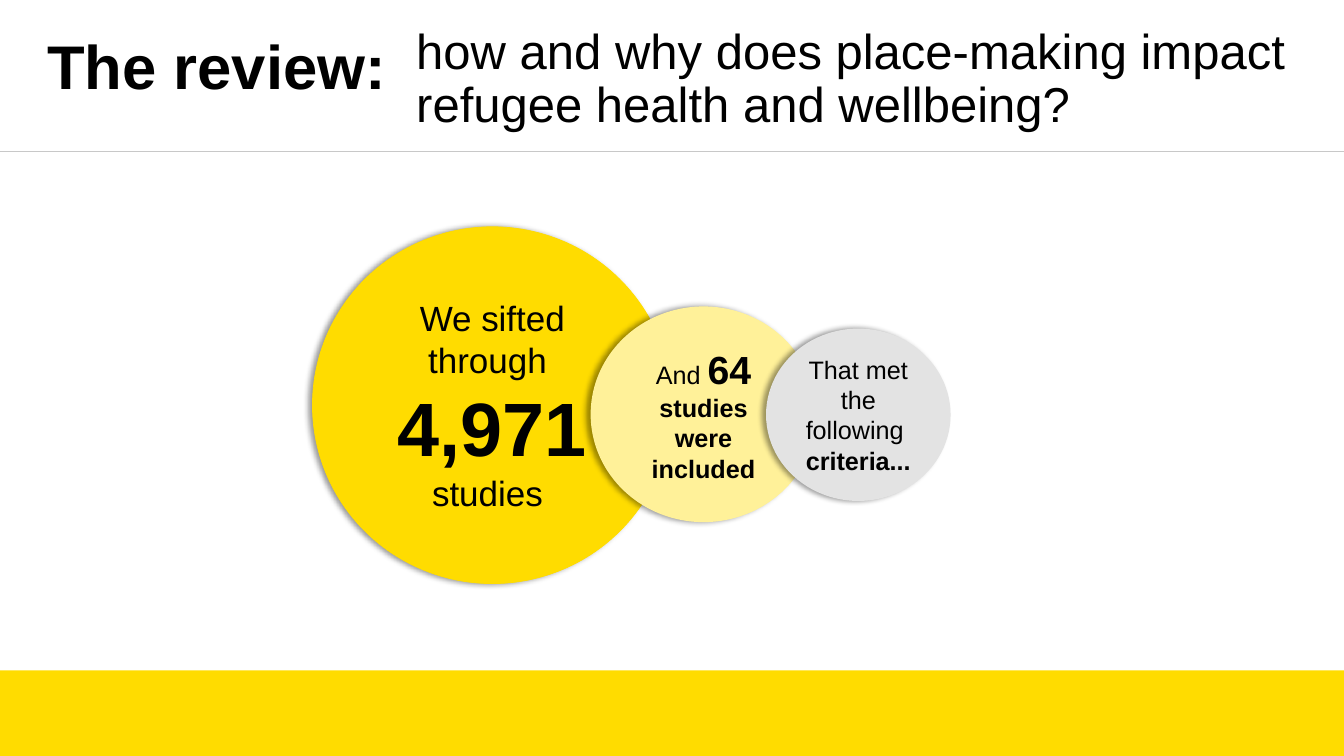
"""Build the review slide: a heading, three overlapping circles and a footer bar."""
from lxml import etree
from pptx import Presentation
from pptx.dml.color import RGBColor
from pptx.enum.shapes import MSO_CONNECTOR, MSO_SHAPE
from pptx.enum.text import MSO_ANCHOR, PP_ALIGN
from pptx.oxml import parse_xml
from pptx.oxml.ns import nsdecls, qn
from pptx.util import Pt

RECT, OVAL = MSO_SHAPE.RECTANGLE, MSO_SHAPE.OVAL
LINE = MSO_CONNECTOR.STRAIGHT
MIDDLE = MSO_ANCHOR.MIDDLE
LEFT, CENTER = PP_ALIGN.LEFT, PP_ALIGN.CENTER
YELLOW = RGBColor(0xFF, 0xDC, 0x00)
PALE = RGBColor(0xFF, 0xF1, 0x99)
GREY = RGBColor(0xE3, 0xE3, 0xE3)
RULE = RGBColor(0xC8, 0xC8, 0xC8)
BLACK = RGBColor(0, 0, 0)
FONT = "Arial"
WIDTH, HEIGHT = 960, 540
BAR = 61.2

SHADOW = (
    f'<a:effectLst {nsdecls("a")}>'
    f'<a:outerShdw blurRad="{Pt(4)}" dist="{Pt(3)}" dir="10800000" algn="r" rotWithShape="0">'
    '<a:srgbClr val="000000"><a:alpha val="40000"/></a:srgbClr>'
    "</a:outerShdw></a:effectLst>"
)

CIRCLES = [
    ((223.2, 162, 257, 254.9), YELLOW, YELLOW, [
        [("We sifted through ", 25, False)],
        [("4,971", 54, True), (" ", 36, True), ("studies ", 25, False)],
    ]),
    ((421.9, 218.9, 161.3, 154.1), PALE, None, [
        [("And ", 18, False), ("64", 28, True), (" ", 24, False), ("studies", 18, True)],
        [("were included", 18, True)],
    ]),
    ((547.2, 234.7, 131.8, 123.1), GREY, None, [
        [("That met the following ", 18, False)],
        [("criteria...", 18, True)],
    ]),
]


def style(font, size, bold):
    """Set the face, size, weight and colour of a font."""
    font.name, font.size, font.bold = FONT, Pt(size), bold
    font.color.rgb = BLACK


def add_solid(slide, kind, box, fill, edge=None):
    """Add a filled shape without a shadow."""
    shape = slide.shapes.add_shape(kind, *map(Pt, box))
    shape.shadow.inherit = False
    shape.fill.solid()
    shape.fill.fore_color.rgb = fill
    if edge is None:
        shape.line.fill.background()
    else:
        shape.line.color.rgb = edge
        shape.line.width = Pt(0.5)
    return shape


def write(frame, paras, align):
    """Fill a text frame with paragraphs of (text, size, bold) runs."""
    frame.word_wrap = True
    frame.vertical_anchor = MIDDLE
    for i, runs in enumerate(paras):
        para = frame.add_paragraph() if i else frame.paragraphs[0]
        para.alignment = align
        if len(runs) == 1:
            style(para.font, *runs[0][1:])
        for text, size, bold in runs:
            run = para.add_run()
            run.text = text
            if len(runs) > 1:
                style(run.font, size, bold)


def add_circle(slide, box, fill, edge, paras):
    """Add a circle with a soft shadow and centred text."""
    shape = add_solid(slide, OVAL, box, fill, edge)
    props = shape.element.spPr
    props.replace(props.find(qn("a:effectLst")), parse_xml(SHADOW))
    write(shape.text_frame, paras, CENTER)


def add_rule(slide, top):
    """Add a thin line across the slide."""
    rule = slide.shapes.add_connector(LINE, 0, Pt(top), Pt(WIDTH), Pt(top))
    rule.line.color.rgb = RULE
    rule.line.width = Pt(0.5)
    etree.SubElement(rule.element.spPr, qn("a:effectLst"))


def add_head(shape, box, text, size, bold):
    """Place a heading box and write its single paragraph."""
    shape.left, shape.top, shape.width, shape.height = map(Pt, box)
    write(shape.text_frame, [[(text, size, bold)]], LEFT)
    shape.text_frame.paragraphs[0].line_spacing = 0.9


def main():
    """Build the slide and save it."""
    deck = Presentation()
    deck.slide_width, deck.slide_height = Pt(WIDTH), Pt(HEIGHT)
    slide = deck.slides.add_slide(deck.slide_layouts[5])
    add_solid(slide, RECT, (0, HEIGHT - BAR, WIDTH, BAR), YELLOW)
    add_head(slide.shapes.title, (26.6, 18.7, 269.3, 61.9), "The review:", 44, True)
    for circle in CIRCLES:
        add_circle(slide, *circle)
    add_rule(slide, 108)
    add_head(slide.shapes.add_textbox(0, 0, 0, 0), (290.2, 5, 658.8, 104.4),
             "how and why does place-making impact refugee health and wellbeing?", 35, False)
    deck.save("out.pptx")


if __name__ == "__main__":
    main()
